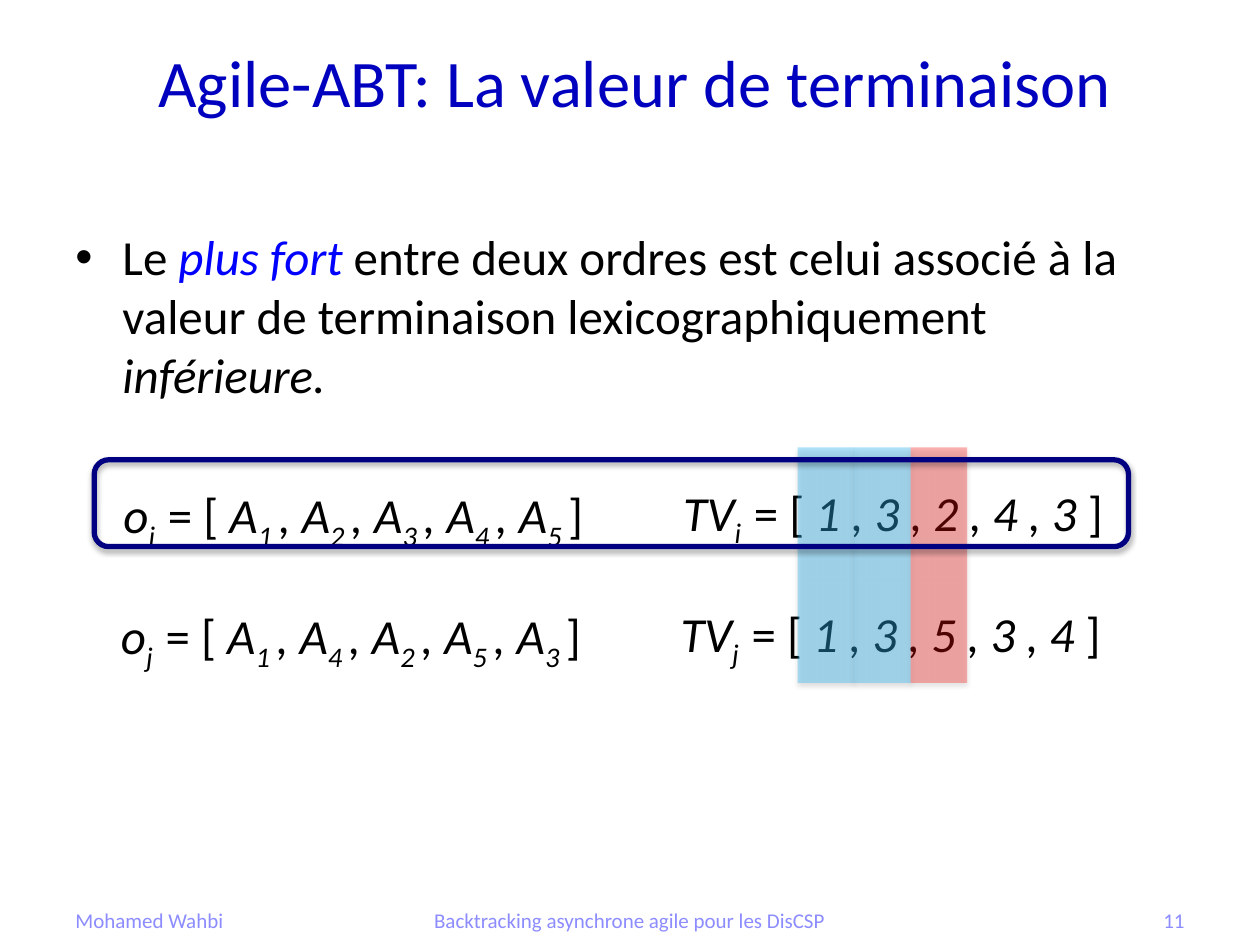
from lxml.etree import SubElement
from pptx import Presentation
from pptx.dml.color import RGBColor
from pptx.enum.shapes import MSO_SHAPE as Shape
from pptx.enum.text import MSO_ANCHOR as Anchor, PP_ALIGN as Align
from pptx.oxml.ns import qn
from pptx.util import Cm, Pt

FONT = "Calibri"
TITLE_BLUE = RGBColor(0x00, 0x00, 0xBF)
TERM_BLUE = RGBColor(0x00, 0x00, 0xFF)
FOOTER_BLUE = RGBColor(0x8C, 0x8C, 0xFF)
FRAME_NAVY = RGBColor(0x00, 0x00, 0x80)
EQUAL_BLUE = RGBColor(0x30, 0xB9, 0xF8)
DIFFERENT_RED = RGBColor(0xFA, 0x0C, 0x09)
BLACK = RGBColor(0x00, 0x00, 0x00)

TITLE = "Agile-ABT: La valeur de terminaison"
RULE = [
    ("Le ", False, BLACK),
    ("plus fort ", True, TERM_BLUE),
    ("entre deux ordres est celui associé à la valeur de terminaison "
     "lexicographiquement ", False, BLACK),
    ("inférieure.", True, BLACK),
]
FOOTERS = [
    ("Mohamed Wahbi", 1.27, 5.92, Align.LEFT),
    ("Backtracking asynchrone agile pour les DisCSP", 6.88, 11.63, Align.CENTER),
    ("11", 18.21, 5.92, Align.RIGHT),
]
ORDERS = [
    ("i", [1, 2, 3, 4, 5], [1, 3, 2, 4, 3], 2.24, 9.6),
    ("j", [1, 4, 2, 5, 3], [1, 3, 5, 3, 4], 2.19, 12.04),
]
COMPARISONS = [(EQUAL_BLUE, 37), (EQUAL_BLUE, 37), (DIFFERENT_RED, 31)]
COMPARISON_LEFT, COMPARISON_WIDTH = 16.08, 1.14


def add_text(slide, left, top, width, height, size, color,
             align=Align.LEFT, anchor=Anchor.TOP):
    frame = slide.shapes.add_textbox(Cm(left), Cm(top), Cm(width), Cm(height)).text_frame
    frame.word_wrap = True
    frame.vertical_anchor = anchor
    paragraph = frame.paragraphs[0]
    paragraph.alignment = align
    paragraph.font.name = FONT
    paragraph.font.size = Pt(size)
    paragraph.font.color.rgb = color
    return paragraph


def add_run(paragraph, text, italic=False, subscript=False):
    run = paragraph.add_run()
    run.text = text
    run.font.italic = italic
    if subscript:
        run.font._element.set("baseline", "-25000")
    return run


def add_bullet(paragraph):
    properties = paragraph._p.get_or_add_pPr()
    properties.set("marL", str(Cm(0.95)))
    properties.set("indent", str(-Cm(0.95)))
    bullet_font = properties.makeelement(qn("a:buFont"), {"typeface": "Arial"})
    bullet = properties.makeelement(qn("a:buChar"), {"char": "•"})
    properties.insert(0, bullet_font)
    properties.insert(1, bullet)


def add_shadow(shape):
    shape.shadow.inherit = False
    effects = shape._element.spPr.find(qn("a:effectLst"))
    shadow = SubElement(effects, qn("a:outerShdw"), blurRad=str(Pt(3.1)),
                        dist=str(Pt(1.8)), dir="5400000", rotWithShape="0")
    color = SubElement(shadow, qn("a:srgbClr"), val="000000")
    SubElement(color, qn("a:alpha"), val="35000")


def add_order(slide, index, agents, values, left, top):
    order = add_text(slide, left, top + 0.05, 10.75, 1.45, 28, BLACK)
    add_run(order, "o", True)
    add_run(order, f"{index}  ", True, True)
    add_run(order, "= [")
    for position, agent in enumerate(agents):
        add_run(order, ", A" if position else " A", True)
        add_run(order, f"{agent} ", True, True)
    add_run(order, "]")

    termination = add_text(slide, left + 11.28, top, 9.7, 1.73, 28, BLACK)
    add_run(termination, "TV", True)
    add_run(termination, f"{index}  ", True, True)
    add_run(termination, "= [")
    add_run(termination, " " + " , ".join(map(str, values)) + " ", True)
    add_run(termination, "]")


def add_comparison(slide, position, color, opacity):
    column = slide.shapes.add_shape(
        Shape.RECTANGLE, Cm(COMPARISON_LEFT + position * COMPARISON_WIDTH),
        Cm(9.02), Cm(COMPARISON_WIDTH), Cm(4.75))
    column.fill.solid()
    column.fill.fore_color.rgb = color
    fill_color = column._element.spPr.find(qn("a:solidFill"))[0]
    SubElement(fill_color, qn("a:alpha"), val=str(opacity * 1000))
    column.line.fill.background()
    add_shadow(column)


def add_winner_frame(slide):
    frame = slide.shapes.add_shape(Shape.ROUNDED_RECTANGLE, Cm(1.9), Cm(9.27),
                                   Cm(20.85), Cm(1.75))
    frame.fill.background()
    frame.line.color.rgb = FRAME_NAVY
    frame.line.width = Pt(3)
    add_shadow(frame)


def main():
    deck = Presentation()
    deck.slide_width, deck.slide_height = Cm(25.4), Cm(19.05)
    slide = deck.slides.add_slide(deck.slide_layouts[6])

    title = add_text(slide, 0.74, 0.05, 24.13, 3.18, 38, TITLE_BLUE,
                     Align.CENTER, Anchor.MIDDLE)
    add_run(title, TITLE)

    rule = add_text(slide, 1.27, 4.45, 22.86, 4.34, 28, BLACK)
    add_bullet(rule)
    for text, italic, color in RULE:
        add_run(rule, text, italic).font.color.rgb = color

    for text, left, width, align in FOOTERS:
        footer = add_text(slide, left, 18.03, width, 1.02, 12, FOOTER_BLUE,
                          align, Anchor.MIDDLE)
        add_run(footer, text)

    for order in ORDERS:
        add_order(slide, *order)
    for position, (color, opacity) in enumerate(COMPARISONS):
        add_comparison(slide, position, color, opacity)
    add_winner_frame(slide)

    deck.save("out.pptx")


if __name__ == "__main__":
    main()
